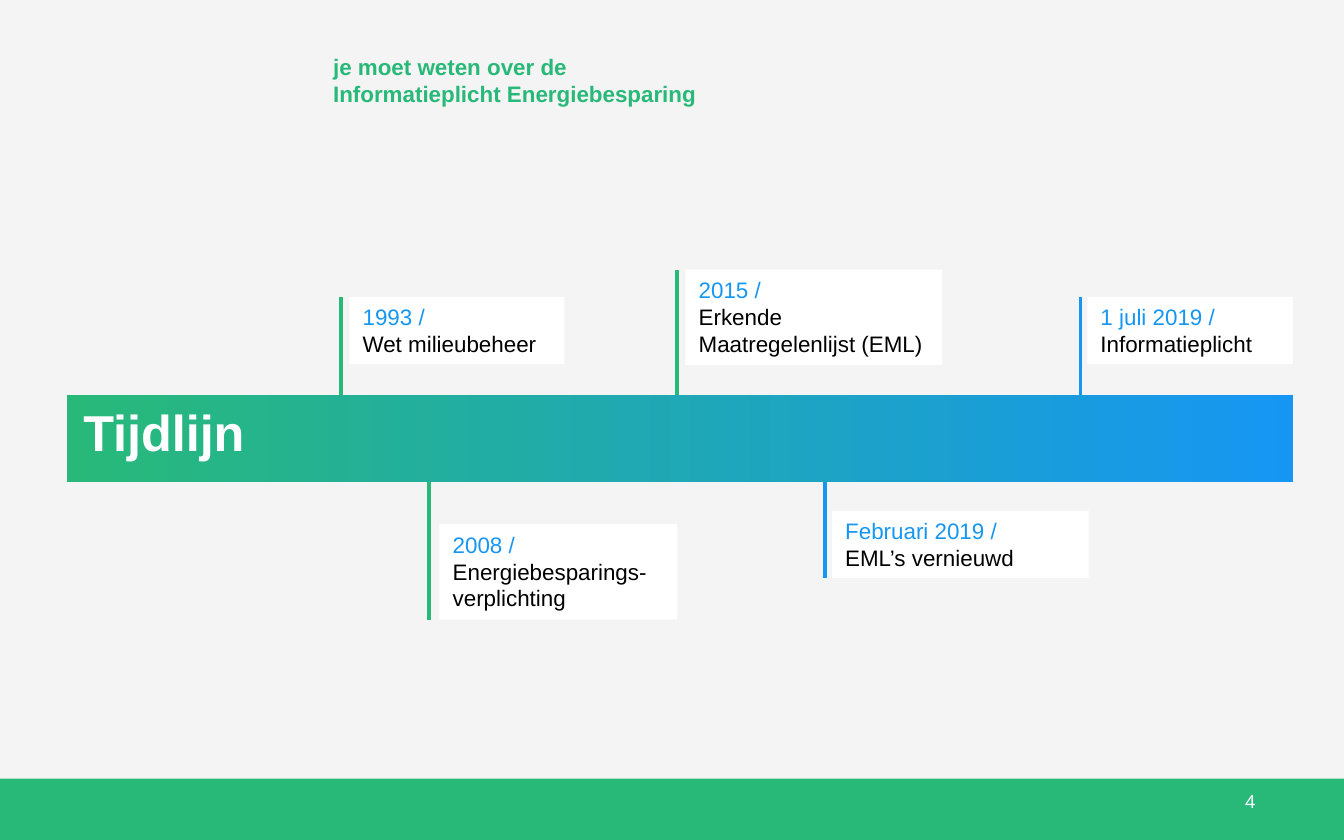
from dataclasses import dataclass

import pptx
import pptx.util
import pptx.dml.color
import pptx.enum.shapes
import pptx.enum.text
import pptx.oxml.ns
from lxml import etree

WIDE, HIGH = 10, 6.25
COL, ROW = WIDE / 100, HIGH / 100
FONT = "Arial"
HUE = {"back": "F4F4F4", "green": "28B979", "blue": "1696F3",
       "white": "FFFFFF", "black": "000000"}
Text = pptx.enum.text


@dataclass
class Box:
    left: float
    top: float
    wide: float
    high: float

    @property
    def base(self) -> float:
        return self.top + self.high


@dataclass
class Run:
    text: str
    hue: str
    size: float = 12
    bold: bool = False


@dataclass
class Event:
    box: Box
    stem: float
    hue: str
    lines: list[list[Run]]


def color(name: str):
    return pptx.dml.color.RGBColor.from_string(HUE[name])


def across(cols: float):
    return pptx.util.Inches(cols * COL)


def down(rows: float):
    return pptx.util.Inches(rows * ROW)


def place(box: Box) -> tuple:
    return across(box.left), down(box.top), across(box.wide), down(box.high)


def draw_rect(slide, box: Box, hue: str):
    kind = pptx.enum.shapes.MSO_SHAPE.RECTANGLE
    shape = slide.shapes.add_shape(kind, *place(box))
    shape.shadow.inherit = False
    shape.line.fill.background()
    shape.fill.solid()
    shape.fill.fore_color.rgb = color(hue)
    return shape


def write(frame, lines: list[list[Run]], align=Text.PP_ALIGN.LEFT,
          anchor=Text.MSO_ANCHOR.TOP) -> None:
    frame.word_wrap = True
    frame.vertical_anchor = anchor
    for i, line in enumerate(lines):
        para = frame.add_paragraph() if i else frame.paragraphs[0]
        para.alignment = align
        for part in line:
            run = para.add_run()
            run.text = part.text
            run.font.name = FONT
            run.font.size = pptx.util.Pt(part.size)
            run.font.bold = part.bold
            run.font.color.rgb = color(part.hue)


def draw_text(slide, box: Box, run: Run, **style):
    frame = slide.shapes.add_textbox(*place(box)).text_frame
    write(frame, [[run]], **style)
    return frame


def draw_card(slide, event: Event) -> None:
    frame = draw_rect(slide, event.box, "white").text_frame
    write(frame, event.lines)
    frame.auto_size = Text.MSO_AUTO_SIZE.SHAPE_TO_FIT_TEXT


def draw_bar(slide, box: Box) -> None:
    fill = draw_rect(slide, box, "green").fill
    fill.gradient()
    fill.gradient_angle = 0
    for stop, hue, spot in zip(fill.gradient_stops, ("green", "blue"), (0, 1)):
        stop.color.rgb = color(hue)
        stop.position = spot


def draw_stem(slide, event: Event, bar: Box) -> None:
    above = event.box.top < bar.top
    start, end = (bar.top, event.box.top) if above else (bar.base, event.box.base)
    x = across(event.stem)
    kind = pptx.enum.shapes.MSO_CONNECTOR.STRAIGHT
    line = slide.shapes.add_connector(kind, x, down(start), x, down(end))
    line.line.width = pptx.util.Pt(2)
    line.line.color.rgb = color(event.hue)
    etree.SubElement(line._element.spPr, pptx.oxml.ns.qn("a:effectLst"))


def pair(date: str, text: str) -> list[list[Run]]:
    return [[Run(date, "blue")], [Run(text, "black")]]


BAR = Box(5, 47, 91.2, 10.4)
TWO, THREE = 8, 11.36
EVENTS = [
    Event(Box(80.9, 35.36, 15.3, TWO), 80.4, "blue",
          pair("1 juli 2019 /", "Informatieplicht")),
    Event(Box(26, 35.36, 16, TWO), 25.4, "green",
          pair("1993 /", "Wet milieubeheer")),
    Event(Box(32.7, 62.4, 17.7, THREE), 31.9, "green",
          [[Run("2008 /", "blue"), Run(" Energiebesparings-", "black")],
           [Run("verplichting", "black")]]),
    Event(Box(51, 32.1, 19.1, THREE), 50.4, "green",
          pair("2015 /", "Erkende Maatregelenlijst (EML)")),
    Event(Box(61.9, 60.8, 19.1, TWO), 61.4, "blue",
          pair("Februari 2019 /", "EML’s vernieuwd")),
]


def main() -> None:
    deck = pptx.Presentation()
    deck.slide_width = pptx.util.Inches(WIDE)
    deck.slide_height = pptx.util.Inches(HIGH)
    slide = deck.slides.add_slide(deck.slide_layouts[6])
    slide.background.fill.solid()
    slide.background.fill.fore_color.rgb = color("back")

    draw_rect(slide, Box(0, 92.7, 100, 7.3), "green")
    draw_text(slide, Box(23.8, 5.6, 31.5, 8),
              Run("je moet weten over de Informatieplicht Energiebesparing",
                  "green", bold=True))
    draw_text(slide, Box(71.1, 92.7, 23.3, 5.3), Run("4", "white", 10),
              align=Text.PP_ALIGN.RIGHT, anchor=Text.MSO_ANCHOR.MIDDLE)
    for event in EVENTS:
        draw_card(slide, event)
    draw_bar(slide, BAR)
    title = draw_text(slide, Box(6.2, 47.7, 17.4, 8.5),
                      Run("Tijdlijn", "white", 27, True))
    title.margin_left = title.margin_right = 0
    title.margin_top = title.margin_bottom = 0
    for event in EVENTS:
        draw_stem(slide, event, BAR)
    deck.save("out.pptx")


if __name__ == "__main__":
    main()
